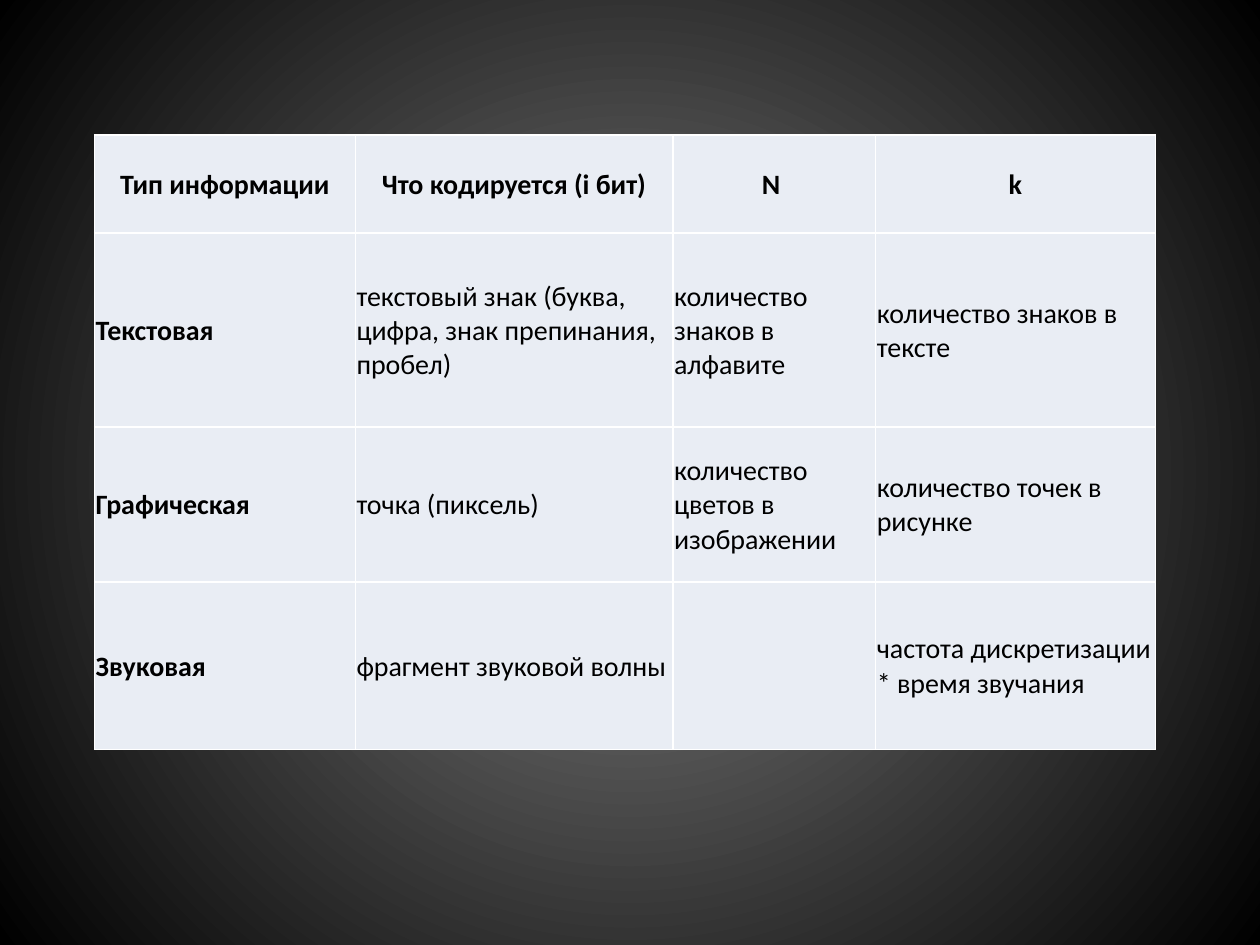
from dataclasses import dataclass

from lxml import etree
from pptx import Presentation
from pptx import util as u
from pptx.dml.color import RGBColor
from pptx.enum import text
from pptx.oxml import ns, parse_xml


@dataclass(frozen=True)
class Theme:
    font: str = "Calibri"
    size: int = 16
    ink: str = "000000"
    cell: str = "E9EDF4"
    border: str = "FFFFFF"
    border_width: int = 1
    center: str = "7F7F7F"
    edge: str = "000000"


theme = Theme()


def write_text(cell, content, bold=False, align=text.PP_ALIGN.LEFT):
    paragraph = cell.text_frame.paragraphs[0]
    paragraph.alignment = align
    run = paragraph.add_run()
    run.text = content
    run.font.name = theme.font
    run.font.size = u.Pt(theme.size)
    run.font.bold = bold
    run.font.color.rgb = RGBColor.from_string(theme.ink)


def add_borders(cell):
    properties = cell._tc.get_or_add_tcPr()
    for side in ("lnL", "lnR", "lnT", "lnB"):
        line = etree.SubElement(properties, ns.qn(f"a:{side}"), w=str(u.Pt(theme.border_width)))
        fill = etree.SubElement(line, ns.qn("a:solidFill"))
        etree.SubElement(fill, ns.qn("a:srgbClr"), val=theme.border)


presentation = Presentation()
presentation.slide_width = u.Inches(10)
presentation.slide_height = u.Inches(7.5)
slide = presentation.slides.add_slide(presentation.slide_layouts[6])

background = slide.background.fill
background.gradient()
for stop, color in zip(background.gradient_stops, (theme.center, theme.edge)):
    stop.color.rgb = RGBColor.from_string(color)
linear = slide._element.find(f".//{ns.qn('a:lin')}")
radial = parse_xml(
    f'<a:path {ns.nsdecls("a")} path="circle">'
    '<a:fillToRect l="50000" t="50000" r="50000" b="50000"/></a:path>'
)
linear.getparent().replace(linear, radial)

rows = [
    ["Тип информации", "Что кодируется (i бит)", "N ", "k"],
    ["Текстовая", "текстовый знак (буква, цифра, знак препинания, пробел)",
     "количество знаков в алфавите", "количество знаков в тексте"],
    ["Графическая", "точка (пиксель)", "количество цветов в изображении",
     "количество точек в рисунке"],
    ["Звуковая", "фрагмент звуковой волны", "", "частота дискретизации * время звучания"],
]
column_widths = [2.07, 2.52, 1.61, 2.22]
row_heights = [0.78, 1.54, 1.23, 1.33]

table = slide.shapes.add_table(
    len(rows), len(column_widths), u.Inches(0.75), u.Inches(1.07),
    u.Inches(sum(column_widths)), u.Inches(sum(row_heights)),
).table
for column, width in zip(table.columns, column_widths):
    column.width = u.Inches(width)
for row, height in zip(table.rows, row_heights):
    row.height = u.Inches(height)

for row_index, row in enumerate(rows):
    for column_index, content in enumerate(row):
        cell = table.cell(row_index, column_index)
        add_borders(cell)
        cell.fill.solid()
        cell.fill.fore_color.rgb = RGBColor.from_string(theme.cell)
        cell.vertical_anchor = text.MSO_ANCHOR.MIDDLE
        cell.margin_left = cell.margin_right = cell.margin_top = u.Inches(0.01)
        cell.margin_bottom = 0
        if content:
            header = row_index == 0
            write_text(
                cell, content, bold=header or column_index == 0,
                align=text.PP_ALIGN.CENTER if header else text.PP_ALIGN.LEFT,
            )

presentation.save("out.pptx")
